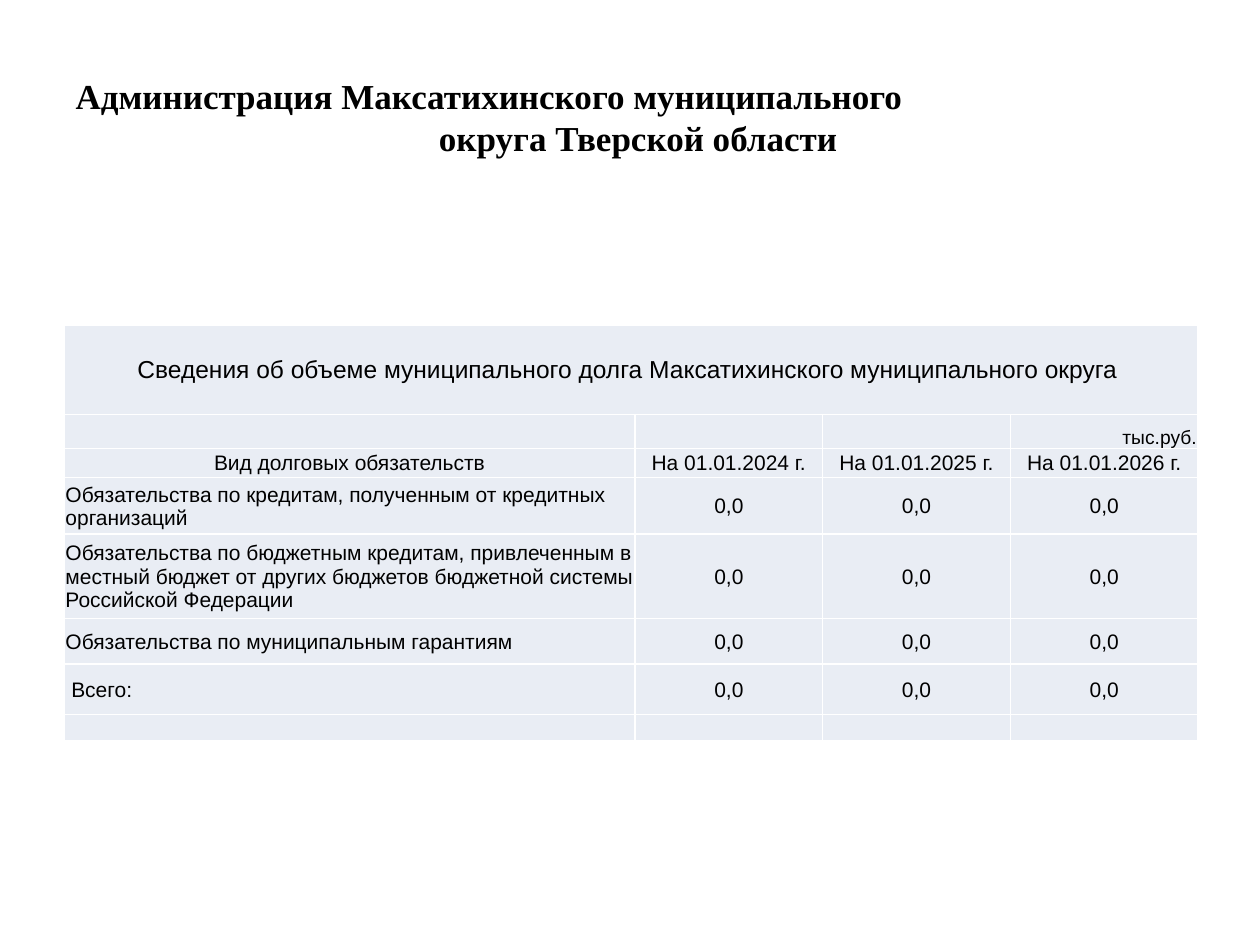
from pptx import Presentation
from pptx.util import Inches, Pt
from pptx.dml.color import RGBColor as Rgb
from pptx.enum.text import PP_ALIGN as Al, MSO_ANCHOR as Anc
from pptx.oxml.ns import qn
from lxml.etree import SubElement as Sub

HEX = {"text": "000000", "cell": "E9EDF4", "line": "FFFFFF"}
ZERO = ["0,0"] * 3
ROWS = [
    ["Сведения об объеме муниципального долга Максатихинского муниципального округа ", "", "", ""],
    ["", "", "", "тыс.руб."],
    ["Вид долговых обязательств"] + [f"На 01.01.{year} г." for year in (2024, 2025, 2026)],
    ["Обязательства по кредитам, полученным от кредитных организаций"] + ZERO,
    ["Обязательства по бюджетным кредитам, привлеченным в местный бюджет "
     "от других бюджетов бюджетной системы Российской Федерации"] + ZERO,
    ["Обязательства по муниципальным гарантиям"] + ZERO,
    [" Всего:"] + ZERO,
    [""] * 4,
]
HIGH = [0.71, 0.27, 0.23, 0.45, 0.67, 0.36, 0.4, 0.21]
WIDE = [4.53, 1.49, 1.49, 1.49]
SIZES = {0: 14, 1: 11}


class Deck:
    """Holds the style and the current slide."""

    def __init__(self):
        self.prs = Presentation()
        self.prs.slide_width, self.prs.slide_height = Inches(10), Inches(7.5)
        self.slide = self.prs.slides.add_slide(self.prs.slide_layouts[5])

    def font(self, para, size, name, bold=False):
        for run in para.runs:
            font = run.font
            font.size, font.name, font.bold = Pt(size), name, bold
            font.color.rgb = Rgb.from_string(HEX["text"])

    def title(self, lines, box):
        shape = self.slide.shapes.title
        shape.left, shape.top, shape.width, shape.height = map(Inches, box)
        frame = shape.text_frame
        frame.text = "\n".join(lines)
        frame.vertical_anchor = Anc.MIDDLE
        for para, side in zip(frame.paragraphs, (Al.LEFT, Al.CENTER)):
            para.alignment = side
            self.font(para, 20, "Times New Roman", True)
        para._p.get_or_add_pPr().set("marL", str(Inches(0.13)))

    def edge(self, cell):
        props = cell._tc.get_or_add_tcPr()
        for side in ("lnL", "lnR", "lnT", "lnB"):
            line = Sub(props, qn(f"a:{side}"), w=str(Pt(1)))
            Sub(Sub(line, qn("a:solidFill")), qn("a:srgbClr"), val=HEX["line"])

    def cell(self, cell, text, size, side, anchor):
        self.edge(cell)
        cell.fill.solid()
        cell.fill.fore_color.rgb = Rgb.from_string(HEX["cell"])
        cell.margin_left = cell.margin_right = cell.margin_top = Inches(0.01)
        cell.margin_bottom = 0
        cell.vertical_anchor = anchor
        para = cell.text_frame.paragraphs[0]
        para.alignment = side
        if text:
            para.text = text
            self.font(para, size, "Arial")
        else:
            para._p.get_or_add_endParaRPr().set("sz", str(size * 100))

    def table(self, left, top):
        frame = self.slide.shapes.add_table(
            len(ROWS), len(WIDE), Inches(left), Inches(top),
            Inches(sum(WIDE)), Inches(sum(HIGH)))
        grid = frame.table
        grid.first_row = grid.horz_banding = False
        for col, wide in zip(grid.columns, WIDE):
            col.width = Inches(wide)
        for r, (texts, high) in enumerate(zip(ROWS, HIGH)):
            grid.rows[r].height = Inches(high)
            for c, text in enumerate(texts):
                side = Al.LEFT if c == 0 and r > 2 else Al.RIGHT if r == 1 else Al.CENTER
                anchor = Anc.BOTTOM if r == 1 else Anc.MIDDLE
                self.cell(grid.cell(r, c), text, SIZES.get(r, 12), side, anchor)
        grid.cell(0, 0).merge(grid.cell(0, len(WIDE) - 1))


def main():
    deck = Deck()
    deck.title(["Администрация Максатихинского муниципального",
                "округа Тверской области"], (0.5, 0.3, 9, 1.25))
    deck.table(0.51, 2.58)
    deck.prs.save("out.pptx")


if __name__ == "__main__":
    main()
